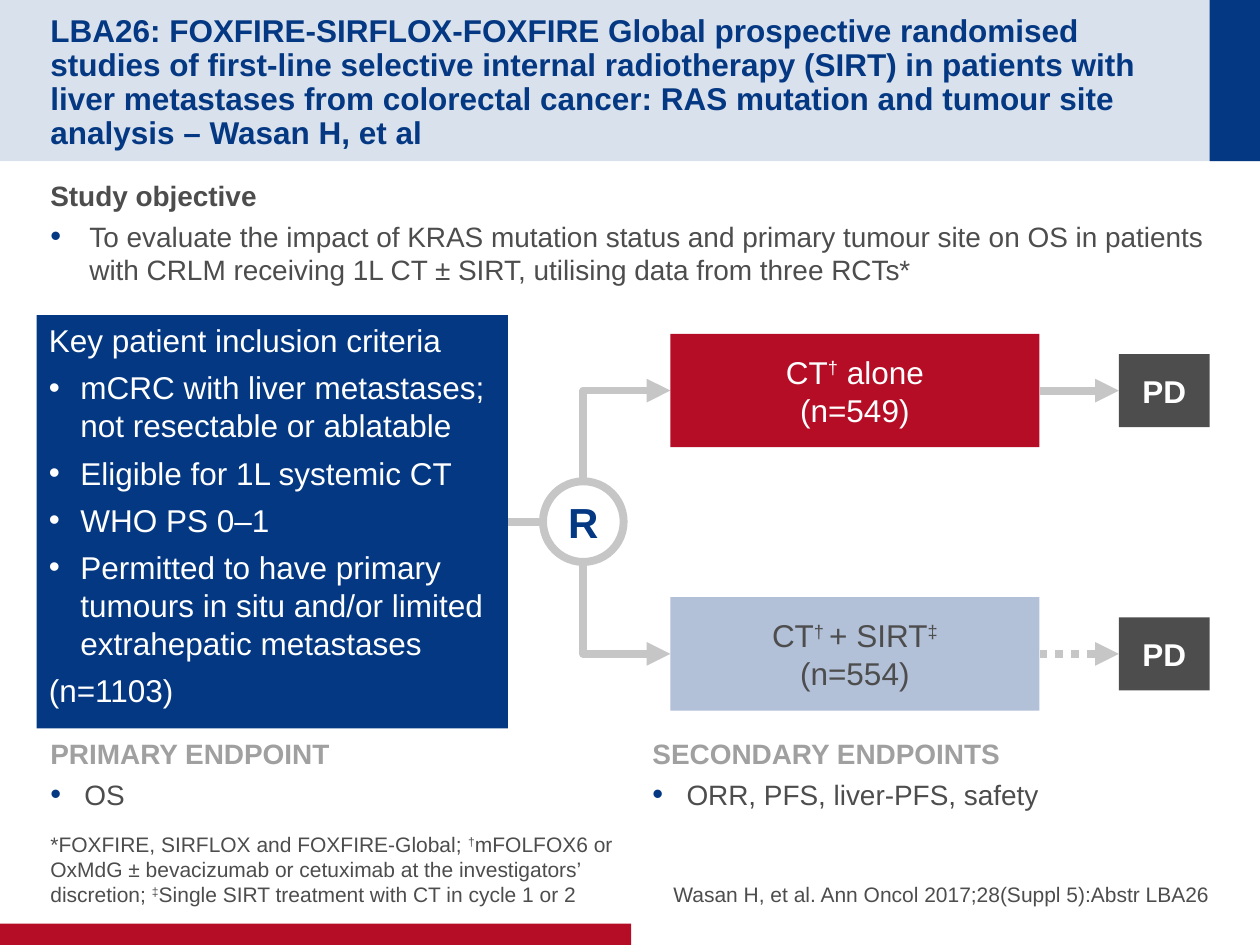
from lxml import etree
from pptx import Presentation
from pptx import util as u
from pptx.dml.color import RGBColor
from pptx.enum import dml, shapes, text
from pptx.oxml.ns import qn

NAVY, RED, GREY, PALE, SILVER = "043882", "B60D27", "4D4D4D", "B2C0D8", "C6C6C6"
WHITE, MUTED = "FFFFFF", "A0A0A0"


def color(code):
    """Turn a hex string into a colour."""
    return RGBColor.from_string(code)


def child(parent, tag, **attributes):
    """Append a DrawingML element to a parent."""
    return etree.SubElement(parent, qn(f"a:{tag}"), attributes)


def prepare(box, insets, anchor, wrap=True):
    """Set the insets, anchor and wrapping of a box's text."""
    frame = box.text_frame
    frame.word_wrap = wrap
    frame.vertical_anchor = anchor
    (frame.margin_left, frame.margin_top,
     frame.margin_right, frame.margin_bottom) = map(u.Inches, insets)
    return box


def add_label(page, area, insets=(0, 0.05, 0, 0.05), anchor=text.MSO_ANCHOR.TOP):
    """Add an empty text box."""
    return prepare(page.shapes.add_textbox(*map(u.Inches, area)), insets, anchor)


def add_block(page, area, fill=None, kind=shapes.MSO_SHAPE.RECTANGLE,
              insets=(0.1, 0, 0.1, 0), anchor=text.MSO_ANCHOR.MIDDLE, wrap=True):
    """Add a flat shape without an outline."""
    box = page.shapes.add_shape(kind, *map(u.Inches, area))
    box.shadow.inherit = False
    box.line.fill.background()
    if fill:
        box.fill.solid()
        box.fill.fore_color.rgb = color(fill)
    else:
        box.fill.background()
    return prepare(box, insets, anchor, wrap)


def add_text(box, words, size=16, ink=GREY, bold=False, align=text.PP_ALIGN.LEFT,
             after=0, spacing=None, indent=0, bullet_ink=None):
    """Add a paragraph; carets enclose superscripts and an indent adds a bullet."""
    frame = box.text_frame
    para = frame.paragraphs[0] if not frame.text else frame.add_paragraph()
    para.alignment = align
    para.space_after = u.Pt(after)
    if spacing:
        para.line_spacing = spacing
    if indent:
        props = para._p.get_or_add_pPr()
        props.set("marL", str(u.Inches(indent)))
        props.set("indent", str(-u.Inches(indent)))
        if bullet_ink:
            child(child(props, "buClr"), "srgbClr", val=bullet_ink)
            child(props, "buSzPct", val="110000")
        child(props, "buFont", typeface="Arial")
        child(props, "buChar", char="•")
    for index, part in enumerate(words.split("^")):
        if not part:
            continue
        span = para.add_run()
        span.text = part
        span.font.name = "Arial"
        span.font.size = u.Pt(size)
        span.font.bold = bold
        span.font.color.rgb = color(ink)
        if index % 2:
            span.font._element.set("baseline", "30000")


def add_link(page, start, end, kind=shapes.MSO_CONNECTOR.STRAIGHT, arrow=True):
    """Add a thick grey connector."""
    link = page.shapes.add_connector(kind, *map(u.Inches, (*start, *end)))
    link.line.color.rgb = color(SILVER)
    link.line.width = u.Pt(4.5)
    if arrow:
        child(link.line._get_or_add_ln(), "tailEnd", type="triangle")
    child(link._element.spPr, "effectLst")
    return link


def add_elbow(page, start, end):
    """Add an arrow that runs vertically and then to the right."""
    link = add_link(page, start, end, shapes.MSO_CONNECTOR.ELBOW)
    (x1, y1), (x2, y2) = start, end
    width, height = abs(y2 - y1), abs(x2 - x1)
    link.left = u.Inches((x1 + x2 - width) / 2)
    link.top = u.Inches((y1 + y2 - height) / 2)
    link.width, link.height = u.Inches(width), u.Inches(height)
    rising = y2 < y1
    frame = link._element.spPr.find(qn("a:xfrm"))
    frame.set("rot", str((90 if rising else 270) * 60000))
    frame.set("flipH", "1")
    frame.set("flipV", "1" if rising else "0")
    link._element.spPr.find(qn("a:prstGeom")).set("prst", "bentConnector2")


def add_header(page, area, title):
    """Draw the tinted title band with its solid end."""
    left, top, width, height = area
    band = add_block(page, area, NAVY)
    tint = band.fill._xPr.find(qn("a:solidFill"))[0]
    child(tint, "alpha", val="15000")
    add_block(page, (left + width - 0.4, top, 0.4, height), NAVY)
    box = add_label(page, (left + 0.4, top + 0.2, width - 0.99, height - 0.4),
                    (0, 0.05, 0, 0), text.MSO_ANCHOR.MIDDLE)
    add_text(box, title, size=18, ink=NAVY, bold=True, spacing=0.9)


def add_section(page, area, heading, item, ink=MUTED, indent=0.27, side=0):
    """Write a bold heading with one bullet below."""
    box = add_label(page, area, (side, 0.05, side, 0.05))
    add_text(box, heading, ink=ink, bold=True, after=4)
    add_text(box, item, after=4, indent=indent, bullet_ink=NAVY)


def add_criteria(page, area, heading, items, total):
    """Draw the panel of inclusion criteria."""
    box = add_block(page, area, NAVY, shapes.MSO_SHAPE.ROUNDED_RECTANGLE,
                    (0.1, 0.05, 0.1, 0.05), text.MSO_ANCHOR.TOP)
    box.adjustments[0] = 0
    style = dict(size=18, ink=WHITE, after=5.4)
    add_text(box, heading, **style)
    for item in items:
        add_text(box, item, indent=0.25, **style)
    add_text(box, total, **style)
    return box


def add_arm(page, area, lines, fill, ink, dotted=False):
    """Draw a treatment arm that leads to progressive disease."""
    left, top, width, height = area
    middle = top + height / 2
    arm = add_block(page, (left, top, 2.93, height), fill)
    for line in lines:
        add_text(arm, line, size=18, ink=ink, align=text.PP_ALIGN.CENTER)
    outcome = add_block(page, (left + width - 0.72, middle - 0.29, 0.72, 0.58), GREY)
    add_text(outcome, "PD", size=18, ink=WHITE, bold=True, align=text.PP_ALIGN.CENTER)
    link = add_link(page, (left + 2.93, middle), (left + width - 0.72, middle))
    link.begin_connect(arm, 3)
    link.end_connect(outcome, 1)
    if dotted:
        link.line.dash_style = dml.MSO_LINE.ROUND_DOT


def add_randomisation(page, area, source, targets):
    """Draw the randomisation circle and its links."""
    left, top, width, height = area
    center, middle = left + width / 2, top + height / 2
    circle = add_block(page, area, kind=shapes.MSO_SHAPE.OVAL, wrap=False)
    circle.line.color.rgb = color(SILVER)
    circle.line.width = u.Pt(4.5)
    add_text(circle, "R", size=24, ink=NAVY, bold=True, align=text.PP_ALIGN.CENTER)
    link = add_link(page, (left - 0.28, middle), (left, middle), arrow=False)
    link.begin_connect(source, 3)
    for x, y in targets:
        add_elbow(page, (center, top if y < middle else top + height), (x, y))


def add_footer(page, area, note, citation):
    """Write the footnote and the citation side by side."""
    left, top, width, height = area
    half = 4.52
    columns = ((left, note, text.PP_ALIGN.LEFT),
               (left + width - half, citation, text.PP_ALIGN.RIGHT))
    for x, words, align in columns:
        box = add_label(page, (x, top, half, height), (0, 0, 0, 0),
                        text.MSO_ANCHOR.BOTTOM)
        add_text(box, words, size=12, align=align, after=4)


def main():
    """Build and save the slide."""
    deck = Presentation()
    deck.slide_width, deck.slide_height = u.Inches(10), u.Inches(7.5)
    page = deck.slides.add_slide(deck.slide_layouts[6])
    add_header(page, (0, 0, 10, 1.28),
               "LBA26: FOXFIRE-SIRFLOX-FOXFIRE Global prospective randomised studies of "
               "first-line selective internal radiotherapy (SIRT) in patients with liver "
               "metastases from colorectal cancer: RAS mutation and tumour site analysis "
               "– Wasan H, et al")
    add_block(page, (0, 7.33, 5.01, 0.17), RED)
    add_section(page, (0.4, 1.37, 9.2, 1.13), "Study objective",
                "To evaluate the impact of KRAS mutation status and primary tumour site on "
                "OS in patients with CRLM receiving 1L CT ± SIRT, utilising data from three "
                "RCTs*", ink=GREY, indent=0.31)
    criteria = add_criteria(
        page, (0.29, 2.5, 3.74, 3.28), "Key patient inclusion criteria",
        ["mCRC with liver metastases; not resectable or ablatable",
         "Eligible for 1L systemic CT", "WHO PS 0–1",
         "Permitted to have primary tumours in situ and/or limited extrahepatic metastases"],
        "(n=1103)")
    add_randomisation(page, (4.31, 3.82, 0.64, 0.64), criteria, [(5.32, 3.1), (5.32, 5.19)])
    add_arm(page, (5.32, 2.65, 4.28, 0.9), ["CT^†^ alone", "(n=549)"], RED, WHITE)
    add_arm(page, (5.32, 4.74, 4.28, 0.9), ["CT^† ^+ SIRT^‡^", "(n=554)"], PALE, GREY,
            dotted=True)
    add_section(page, (0.4, 5.8, 4.52, 0.72), "PRIMARY ENDPOINT", "OS")
    add_section(page, (5.08, 5.8, 4.52, 0.87), "SECONDARY ENDPOINTS",
                "ORR, PFS, liver-PFS, safety", side=0.1)
    add_footer(page, (0.4, 6.67, 9.2, 0.53),
               "*FOXFIRE, SIRFLOX and FOXFIRE-Global; ^†^mFOLFOX6 or OxMdG ± bevacizumab or "
               "cetuximab at the investigators’ discretion; ^‡^Single SIRT treatment with CT "
               "in cycle 1 or 2",
               "Wasan H, et al. Ann Oncol 2017;28(Suppl 5):Abstr LBA26")
    deck.save("out.pptx")


if __name__ == "__main__":
    main()
